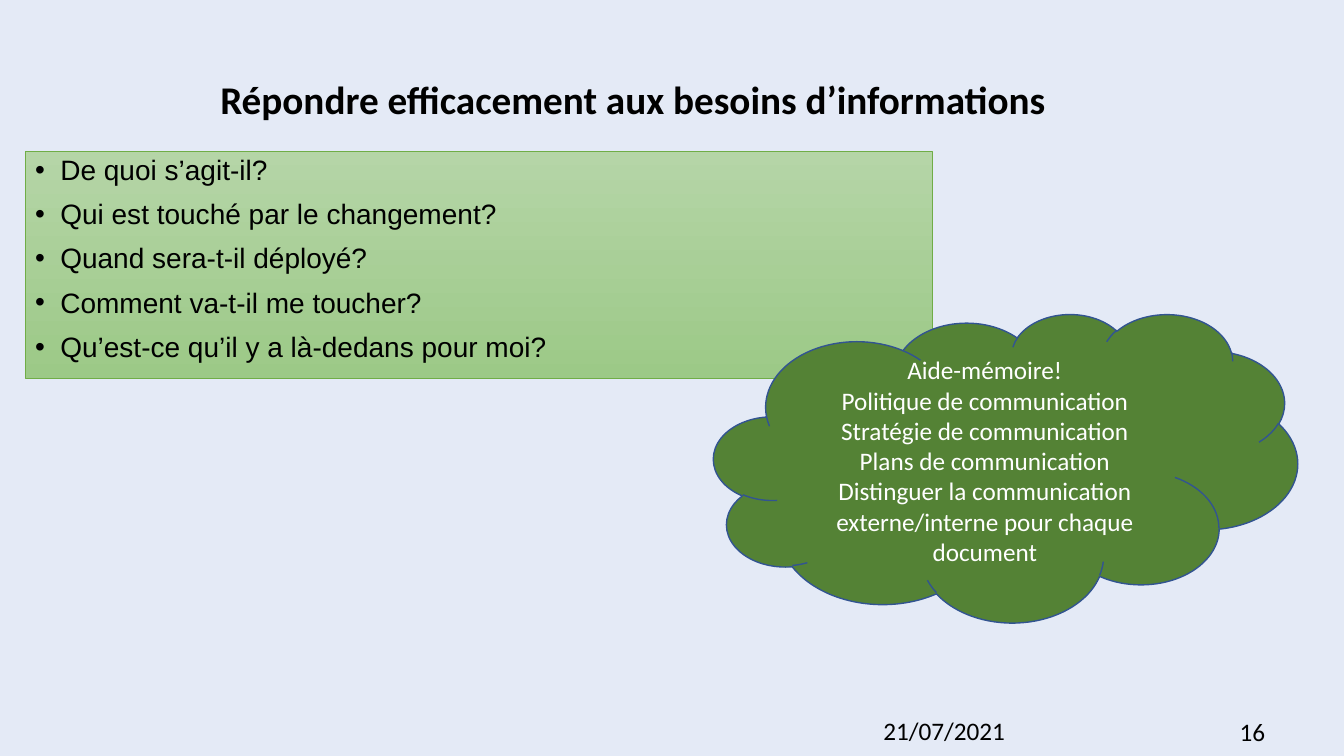
from lxml.etree import SubElement
from pptx import Presentation
from pptx.dml.color import RGBColor
from pptx.enum.shapes import MSO_SHAPE as Shape
from pptx.enum.text import MSO_ANCHOR as Anchor, PP_ALIGN as Align
from pptx.oxml.ns import qn
from pptx.util import Pt

BACKGROUND = RGBColor(0xE4, 0xEA, 0xF6)
BLACK = RGBColor(0x00, 0x00, 0x00)
WHITE = RGBColor(0xFF, 0xFF, 0xFF)
LIGHT_GREEN = RGBColor(0xB5, 0xD5, 0xA7)
MID_GREEN = RGBColor(0x9C, 0xC9, 0x87)
EDGE_GREEN = RGBColor(0x70, 0xAD, 0x47)
DARK_GREEN = RGBColor(0x54, 0x82, 0x35)
EDGE_BLUE = RGBColor(0x32, 0x54, 0x91)

QUESTIONS = [
    "De quoi s’agit-il?",
    "Qui est touché par le changement?",
    "Quand sera-t-il déployé?",
    "Comment va-t-il me toucher?",
    "Qu’est-ce qu’il y a là-dedans pour moi?",
]
REMINDERS = [
    "Aide-mémoire!",
    "Politique de communication",
    "Stratégie de communication",
    "Plans de communication",
    "Distinguer la communication externe/interne pour chaque document",
]


def add_bullet(para, indent):
    """Give a paragraph a round bullet with a hanging indent in points."""
    properties = para._p.get_or_add_pPr()
    properties.set("marL", str(Pt(indent)))
    properties.set("indent", str(Pt(-indent)))
    SubElement(properties, qn("a:buFont"), typeface="Arial")
    SubElement(properties, qn("a:buChar"), char="•")


def write(shape, lines, size=18, font="Calibri", color=BLACK, bold=False,
          align=Align.LEFT, anchor=Anchor.TOP, spacing=1.0, gap=0, indent=0):
    """Write one paragraph per line into a shape."""
    frame = shape.text_frame
    frame.word_wrap = True
    frame.vertical_anchor = anchor
    for index, line in enumerate(lines):
        para = frame.add_paragraph() if index else frame.paragraphs[0]
        para.alignment = align
        para.line_spacing = spacing
        if index and gap:
            para.space_before = Pt(gap)
        if indent:
            add_bullet(para, indent)
        span = para.add_run()
        span.text = line
        span.font.size = Pt(size)
        span.font.name = font
        span.font.bold = bold
        span.font.color.rgb = color


def add_label(page, box, text, **style):
    """Place a one-paragraph text box."""
    write(page.shapes.add_textbox(*map(Pt, box)), [text], **style)


def add_outlined(page, kind, box, edge, width):
    """Place a preset shape with an outline and no shadow."""
    shape = page.shapes.add_shape(kind, *map(Pt, box))
    shape.shadow.inherit = False
    shape.line.color.rgb = edge
    shape.line.width = Pt(width)
    return shape


def add_questions(page, box):
    """Place the green panel with the bulleted questions."""
    panel = add_outlined(page, Shape.RECTANGLE, box, EDGE_GREEN, 0.5)
    panel.fill.gradient()
    panel.fill.gradient_angle = 270
    for stop, color in zip(panel.fill.gradient_stops, (LIGHT_GREEN, MID_GREEN)):
        stop.color.rgb = color
    write(panel, QUESTIONS, size=20, font="Arial", spacing=0.9, gap=10, indent=18)


def add_reminder(page, box):
    """Place the cloud with the communication reminders."""
    cloud = add_outlined(page, Shape.CLOUD, box, EDGE_BLUE, 1)
    cloud.fill.solid()
    cloud.fill.fore_color.rgb = DARK_GREEN
    write(cloud, REMINDERS, color=WHITE, align=Align.CENTER, anchor=Anchor.MIDDLE)


def add_footer(page, box):
    """Place the date at the left and the page number at the right of the footer."""
    left, top, width, height = box
    number_width = 79
    add_label(page, (left, top, 216, height), "21/07/2021")
    add_label(page, (left + width - number_width, top + 0.7, number_width, height), "16")


def main():
    """Build the slide and save the deck."""
    deck = Presentation()
    deck.slide_width, deck.slide_height = Pt(960), Pt(540)
    page = deck.slides.add_slide(deck.slide_layouts[6])
    page.background.fill.solid()
    page.background.fill.fore_color.rgb = BACKGROUND
    add_footer(page, (624, 507.6, 333.4, 29))
    add_label(page, (128, 39, 648, 67.5), "Répondre efficacement aux besoins d’informations",
              size=28, bold=True, align=Align.CENTER, anchor=Anchor.MIDDLE, spacing=0.9)
    add_questions(page, (18, 108, 648, 162))
    add_reminder(page, (509.8, 224, 417, 220.3))
    deck.save("out.pptx")


if __name__ == "__main__":
    main()
